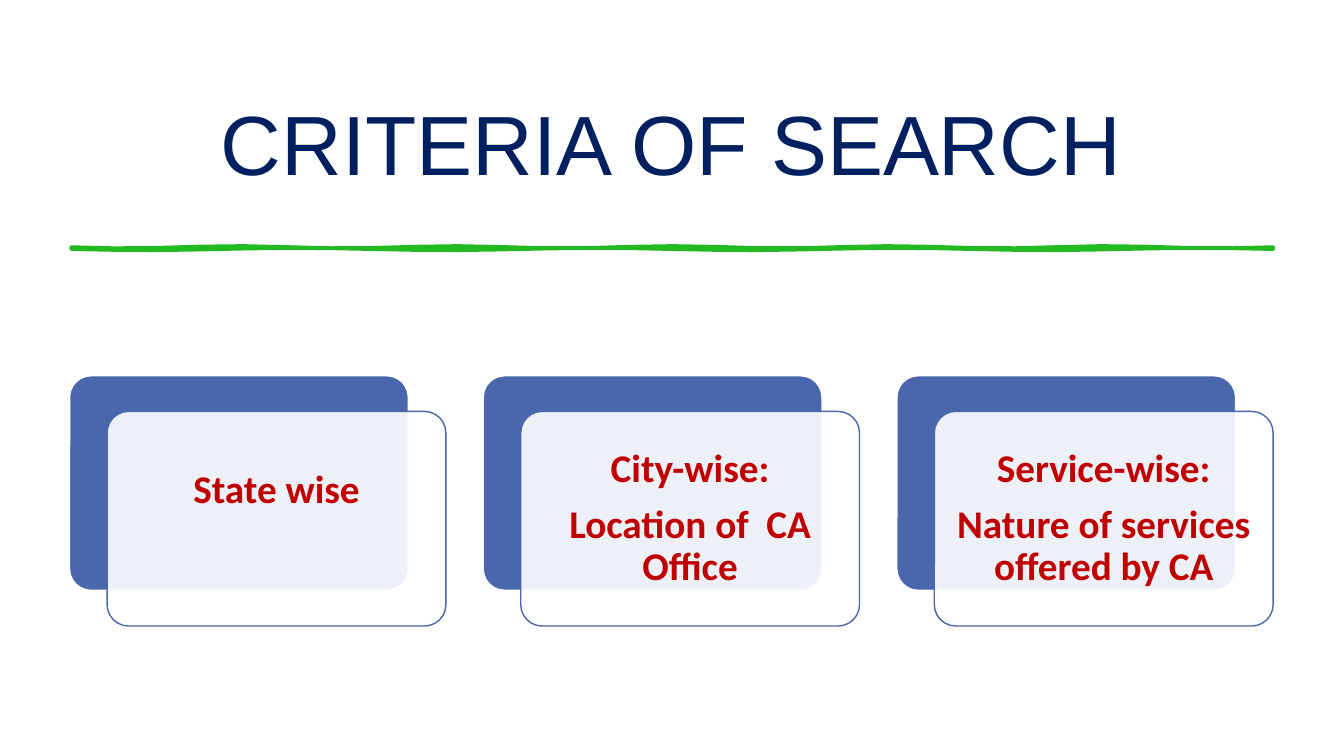
from math import pi, sin

from lxml.etree import SubElement
from pptx import Presentation
from pptx.dml.color import RGBColor
from pptx.enum.shapes import MSO_SHAPE
from pptx.enum.text import MSO_ANCHOR, PP_ALIGN
from pptx.oxml.ns import qn
from pptx.util import Pt

# Content
TITLE = "CRITERIA OF SEARCH"
CRITERIA = [
    ["State wise"],
    ["City-wise:", "Location of  CA Office"],
    ["Service-wise:", "Nature of services offered by CA"],
]

THEME = {
    "title": RGBColor(0x00, 0x20, 0x60),
    "card": RGBColor(0x4A, 0x66, 0xAC),
    "text": RGBColor(0xC0, 0x00, 0x00),
    "rule": RGBColor(0x23, 0xB9, 0x21),
    "white": RGBColor(0xFF, 0xFF, 0xFF),
    "title_font": "Arial",
    "card_font": "Calibri",
    "title_size": 60,
    "card_size": 28,
}

# Layout in points
LEFT, CONTENT_WIDTH = 49.7, 859.7
TITLE_TOP, TITLE_HEIGHT = 49.7, 103.7
RULE_LEFT, RULE_WIDTH, RULE_STEPS = 51, 858.3, 28
RULE_EDGES = [  # middle height, amplitude, half waves
    (176.6, 0.8, 11),
    (177.9, 0.8, 8),
]
CARD_TOP, CARD_WIDTH, CARD_HEIGHT = 268.4, 242, 153.3
SHIFT_X, SHIFT_Y = 26.8, 25.5
PITCH = (CONTENT_WIDTH - SHIFT_X - CARD_WIDTH) / (len(CRITERIA) - 1)
LABEL_GAP = 4.5
LABEL_INSET = 8.6
PARAGRAPH_GAP = 9.8
SINGLE_LINE_LIFT = 40


def add_text(slide, left, top, width, height, lines, font, size, color, bold=False):
    box = slide.shapes.add_textbox(Pt(left), Pt(top), Pt(width), Pt(height))
    frame = box.text_frame
    frame.word_wrap = True
    frame.vertical_anchor = MSO_ANCHOR.MIDDLE
    for index, line in enumerate(lines):
        paragraph = frame.paragraphs[0] if index == 0 else frame.add_paragraph()
        paragraph.alignment = PP_ALIGN.CENTER
        run = paragraph.add_run()
        run.text = line
        run.font.name = font
        run.font.size = Pt(size)
        run.font.bold = bold
        run.font.color.rgb = color
    return frame


def paint(shape, fill, line, line_width):
    shape.shadow.inherit = False
    shape.fill.solid()
    shape.fill.fore_color.rgb = fill
    shape.line.color.rgb = line
    shape.line.width = Pt(line_width)


def add_card(slide, left, top, fill, line):
    card = slide.shapes.add_shape(
        MSO_SHAPE.ROUNDED_RECTANGLE, Pt(left), Pt(top), Pt(CARD_WIDTH), Pt(CARD_HEIGHT))
    card.adjustments[0] = 0.1
    paint(card, fill, line, 1)
    return card


def rule_edge(middle, amplitude, half_waves):
    parts = [step / RULE_STEPS for step in range(RULE_STEPS + 1)]
    return [(Pt(RULE_LEFT + RULE_WIDTH * part),
             Pt(middle + amplitude * sin(pi * half_waves * part))) for part in parts]


def main():
    presentation = Presentation()
    presentation.slide_width, presentation.slide_height = Pt(960), Pt(540)
    slide = presentation.slides.add_slide(presentation.slide_layouts[6])

    # Title
    add_text(slide, LEFT, TITLE_TOP, CONTENT_WIDTH, TITLE_HEIGHT, [TITLE],
             THEME["title_font"], THEME["title_size"], THEME["title"])

    # Hand-drawn rule
    upper, lower = [rule_edge(*edge) for edge in RULE_EDGES]
    outline = upper + lower[::-1]
    builder = slide.shapes.build_freeform(*outline[0])
    builder.add_line_segments(outline[1:], close=True)
    paint(builder.convert_to_shape(), THEME["rule"], THEME["rule"], 2.75)

    # Criteria cards
    for index, lines in enumerate(CRITERIA):
        left = LEFT + index * PITCH
        front_left, front_top = left + SHIFT_X, CARD_TOP + SHIFT_Y
        add_card(slide, left, CARD_TOP, THEME["card"], THEME["white"])
        front = add_card(slide, front_left, front_top, THEME["white"], THEME["card"])
        color = front.fill._xPr.find(qn("a:solidFill"))[0]
        SubElement(color, qn("a:alpha")).set("val", "90000")

        # Card label
        frame = add_text(slide, front_left + LABEL_GAP, front_top + LABEL_GAP,
                         CARD_WIDTH - 2 * LABEL_GAP, CARD_HEIGHT - 2 * LABEL_GAP, lines,
                         THEME["card_font"], THEME["card_size"], THEME["text"], bold=True)
        frame.margin_left = frame.margin_right = frame.margin_top = Pt(LABEL_INSET)
        lift = SINGLE_LINE_LIFT if len(lines) == 1 else 0
        frame.margin_bottom = Pt(LABEL_INSET + lift)
        for paragraph in frame.paragraphs:
            paragraph.line_spacing = 0.9
            paragraph.space_after = Pt(PARAGRAPH_GAP)

    presentation.save("out.pptx")


if __name__ == "__main__":
    main()
